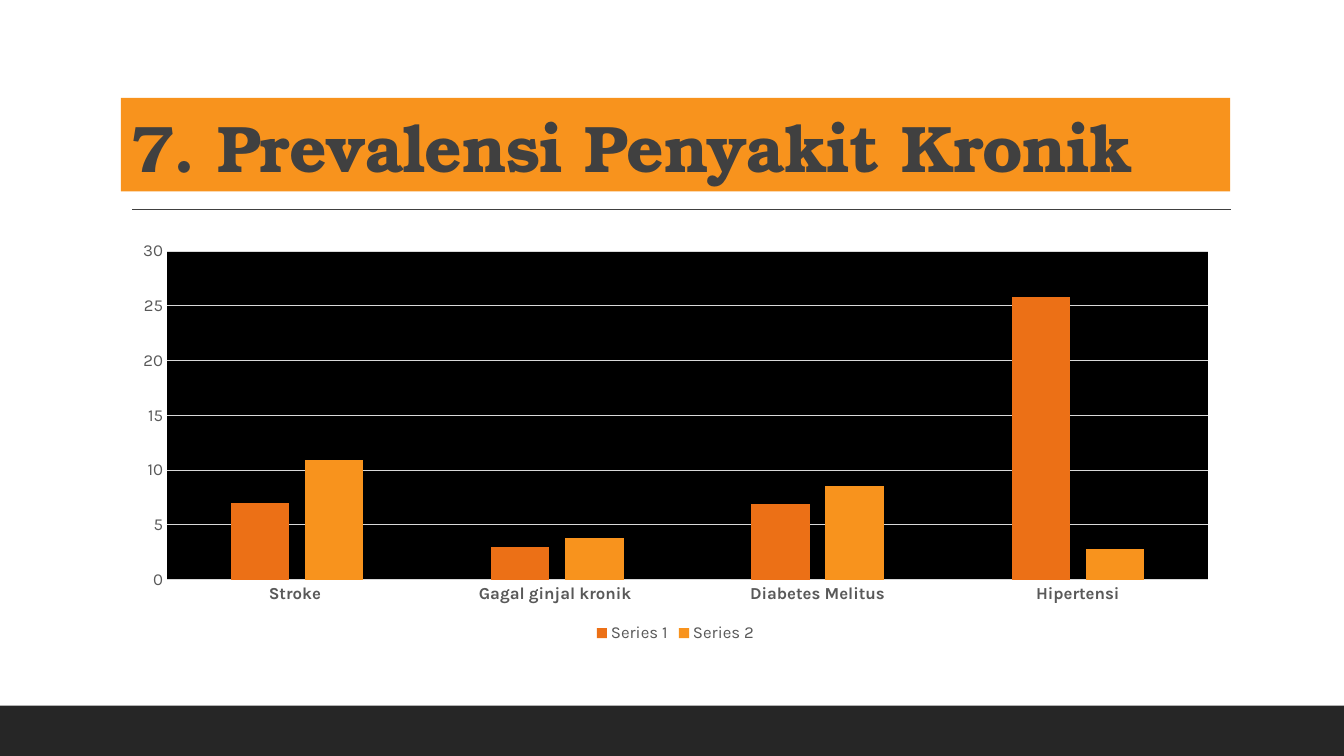
from dataclasses import dataclass

from lxml import etree
from pptx import Presentation
from pptx.chart.data import CategoryChartData
from pptx.dml.color import RGBColor
from pptx.enum.chart import XL_CHART_TYPE, XL_LEGEND_POSITION, XL_TICK_MARK
from pptx.enum.shapes import MSO_CONNECTOR, MSO_SHAPE
from pptx.enum.text import MSO_ANCHOR, MSO_AUTO_SIZE, PP_ALIGN
from pptx.oxml import parse_xml
from pptx.oxml.ns import nsdecls, qn
from pptx.util import Inches, Pt

COLUMNS = XL_CHART_TYPE.COLUMN_CLUSTERED
LEGEND_BOTTOM = XL_LEGEND_POSITION.BOTTOM
NO_TICK = XL_TICK_MARK.NONE
STRAIGHT = MSO_CONNECTOR.STRAIGHT
RECTANGLE = MSO_SHAPE.RECTANGLE
ANCHOR_BOTTOM = MSO_ANCHOR.BOTTOM
NO_AUTOFIT = MSO_AUTO_SIZE.NONE
LEFT = PP_ALIGN.LEFT
TITLE_ONLY = 5


@dataclass(frozen=True)
class Theme:
    heading_font: str = "TeX Gyre Bonum"
    body_font: str = "Karla"
    title_size: float = 47
    label_size: float = 12
    chart_size: float = 10
    footer: str = "262626"
    dark: str = "404040"
    label: str = "595959"
    grid: str = "D9D9D9"
    plot: str = "000000"
    orange: str = "EC7016"
    amber: str = "F8931D"


THEME = Theme()
CATEGORIES = ["Stroke ", "Gagal ginjal kronik ", "Diabetes Melitus", "Hipertensi"]
SERIES = [
    ("Series 1", [7, 3, 6.9, 25.8], THEME.orange),
    ("Series 2", [10.9, 3.8, 8.5, 2.8], THEME.amber),
]


def fill_solid(target, color):
    target.fill.solid()
    target.fill.fore_color.rgb = RGBColor.from_string(color)


def style_line(line, color, width):
    line.color.rgb = RGBColor.from_string(color)
    line.width = Pt(width)


def style_font(font, name, size, color, bold=False):
    font.name = name
    font.size = Pt(size)
    font.bold = bold
    font.color.rgb = RGBColor.from_string(color)


def add_band(slide, left, top, width, height, color):
    band = slide.shapes.add_shape(RECTANGLE, left, top, width, height)
    band.shadow.inherit = False
    fill_solid(band, color)
    band.line.fill.background()


def add_rule(slide, left, right, top):
    rule = slide.shapes.add_connector(STRAIGHT, left, top, right, top)
    style_line(rule.line, THEME.dark, 1)
    properties = rule._element.find(qn("p:spPr"))
    etree.SubElement(properties, qn("a:effectLst"))


def set_title(slide, text):
    title = slide.shapes.title
    title.left, title.top = Inches(1.2), Inches(0.97)
    title.width, title.height = Inches(11), Inches(0.93)
    fill_solid(title, THEME.amber)
    frame = title.text_frame
    frame.text = text
    frame.word_wrap = True
    frame.auto_size = NO_AUTOFIT
    frame.vertical_anchor = ANCHOR_BOTTOM
    paragraph = frame.paragraphs[0]
    paragraph.alignment = LEFT
    paragraph.line_spacing = 0.9
    run = paragraph.runs[0]
    style_font(run.font, THEME.heading_font, THEME.title_size, THEME.dark, True)
    # Tighten the letter spacing by half a point
    run._r.get_or_add_rPr().set("spc", "-50")


def style_axis(axis, bold=False):
    axis.major_tick_mark = NO_TICK
    axis.minor_tick_mark = NO_TICK
    style_font(axis.tick_labels.font, THEME.body_font, THEME.label_size,
               THEME.label, bold)


def fill_plot_area(chart, color):
    plot_area = chart._chartSpace.find(qn("c:chart")).find(qn("c:plotArea"))
    plot_area.append(parse_xml(
        f'<c:spPr {nsdecls("c", "a")}><a:solidFill><a:srgbClr val="{color}"/>'
        "</a:solidFill><a:ln><a:noFill/></a:ln></c:spPr>"))


def add_column_chart(slide, left, top, width, height):
    data = CategoryChartData()
    data.categories = CATEGORIES
    for name, values, _ in SERIES:
        data.add_series(name, values)
    chart = slide.shapes.add_chart(COLUMNS, left, top, width, height, data).chart
    chart.has_title = False
    style_font(chart.font, THEME.body_font, THEME.chart_size, THEME.plot)

    # Columns
    plot = chart.plots[0]
    plot.vary_by_categories = False
    plot.gap_width = 219
    plot.overlap = -27
    for series, (_, _, color) in zip(plot.series, SERIES):
        fill_solid(series.format, color)
        series.invert_if_negative = False
    fill_plot_area(chart, THEME.plot)

    # Axes
    style_axis(chart.category_axis, bold=True)
    style_line(chart.category_axis.format.line, THEME.grid, 0.75)
    value_axis = chart.value_axis
    style_axis(value_axis)
    value_axis.minimum_scale = 0
    value_axis.maximum_scale = 30
    value_axis.major_unit = 5
    value_axis.format.line.fill.background()
    value_axis.has_major_gridlines = True
    style_line(value_axis.major_gridlines.format.line, THEME.grid, 0.75)

    # Legend
    chart.has_legend = True
    chart.legend.position = LEGEND_BOTTOM
    chart.legend.include_in_layout = False
    style_font(chart.legend.font, THEME.body_font, THEME.label_size, THEME.label)


def main():
    presentation = Presentation()
    presentation.slide_width = Inches(13.33)
    presentation.slide_height = Inches(7.5)
    slide = presentation.slides.add_slide(presentation.slide_layouts[TITLE_ONLY])

    # Footer band and heading
    add_band(slide, 0, Inches(7), presentation.slide_width, Inches(0.5), THEME.footer)
    add_rule(slide, Inches(1.31), Inches(12.21), Inches(2.08))
    set_title(slide, "7. Prevalensi Penyakit Kronik")

    # Prevalence chart
    add_column_chart(slide, Inches(1.2), Inches(2.31), Inches(11), Inches(4.11))
    presentation.save("out.pptx")


if __name__ == "__main__":
    main()
